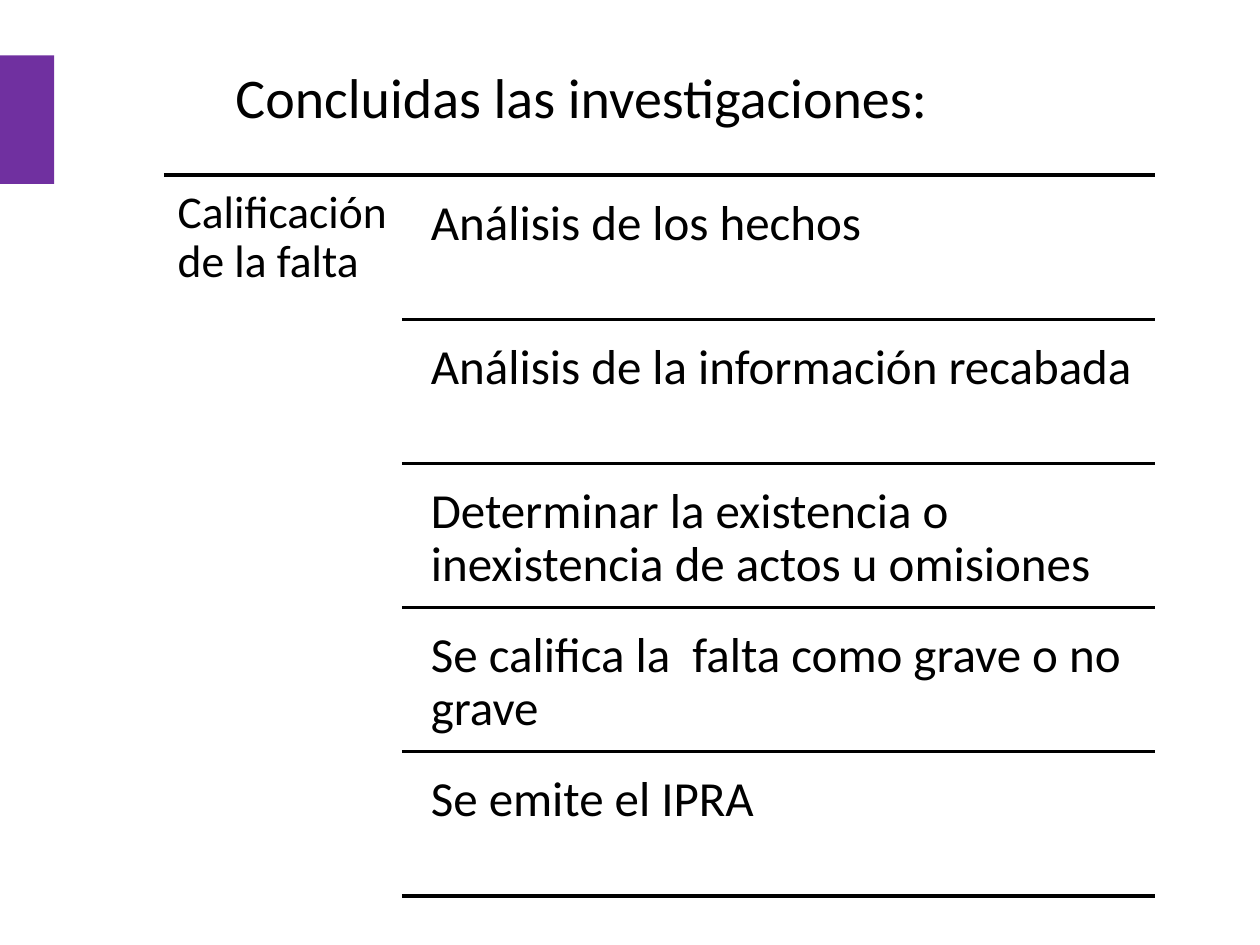
"""Build the slide listing the steps that follow concluded investigations."""
import pptx
import pptx.dml.color
import pptx.enum.shapes
import pptx.enum.text
import pptx.oxml
import pptx.oxml.ns
import pptx.util
from pptx.util import Inches

BLACK = pptx.dml.color.RGBColor(0x00, 0x00, 0x00)
PURPLE = pptx.dml.color.RGBColor(0x70, 0x30, 0xA0)

STEPS = [
    "Análisis de los hechos",
    "Análisis de la información recabada",
    "Determinar la existencia o inexistencia de actos u omisiones",
    "Se califica la  falta como grave o no grave",
    "Se emite el IPRA",
]
LIST_TOP, LIST_BOTTOM = 1.39, 7.11
LIST_LEFT, STEP_LEFT, LIST_RIGHT = 1.3, 3.19, 9.17
STEP_PITCH = (LIST_BOTTOM - LIST_TOP) / len(STEPS)


def add_accent(slide):
    accent = slide.shapes.add_shape(
        pptx.enum.shapes.MSO_SHAPE.RECTANGLE,
        Inches(0), Inches(0.44), Inches(0.43), Inches(1.02))
    accent.shadow.inherit = False
    accent.fill.solid()
    accent.fill.fore_color.rgb = PURPLE
    accent.line.fill.background()


def add_text(slide, wording, left, top, width, height, size, inset):
    box = slide.shapes.add_textbox(
        Inches(left), Inches(top), Inches(width), Inches(height))
    frame = box.text_frame
    frame.word_wrap = True
    frame.margin_left = frame.margin_right = Inches(inset)
    frame.margin_top = frame.margin_bottom = Inches(inset)
    paragraph = frame.paragraphs[0]
    paragraph.text = wording
    paragraph.line_spacing = 0.9
    paragraph.font.name = "Calibri"
    paragraph.font.size = pptx.util.Pt(size)
    paragraph.font.color.rgb = BLACK
    return frame


def add_title(slide, wording):
    title = add_text(slide, wording, 1.77, 0.29, 7.01, 0.94, 32, 0.1)
    title.margin_top = title.margin_bottom = Inches(0.05)
    title.vertical_anchor = pptx.enum.text.MSO_ANCHOR.MIDDLE
    title.paragraphs[0].line_spacing = 1.0


def add_rule(slide, left, top):
    rule = slide.shapes.add_connector(
        pptx.enum.shapes.MSO_CONNECTOR.STRAIGHT,
        Inches(left), Inches(top), Inches(LIST_RIGHT), Inches(top))
    rule.line.color.rgb = BLACK
    rule.line.width = pptx.util.Pt(2)
    properties = rule.element.find(pptx.oxml.ns.qn("p:spPr"))
    properties.append(pptx.oxml.parse_xml(
        f"<a:effectLst {pptx.oxml.ns.nsdecls('a')}/>"))


def add_step(slide, wording, top):
    add_text(slide, wording, 3.3, top + 0.06, 5.86, 1.09, 28, 0.12)
    add_rule(slide, STEP_LEFT, top + STEP_PITCH)


def main():
    deck = pptx.Presentation()
    deck.slide_width, deck.slide_height = Inches(10), Inches(7.5)
    slide = deck.slides.add_slide(deck.slide_layouts[6])
    add_accent(slide)
    add_title(slide, "Concluidas las investigaciones:")
    add_rule(slide, LIST_LEFT, LIST_TOP)
    add_text(slide, "Calificación de la falta", LIST_LEFT, LIST_TOP,
             STEP_LEFT - LIST_LEFT, 5.78, 26, 0.11)
    for index, wording in enumerate(STEPS):
        add_step(slide, wording, LIST_TOP + index * STEP_PITCH)
    deck.save("out.pptx")


if __name__ == "__main__":
    main()
